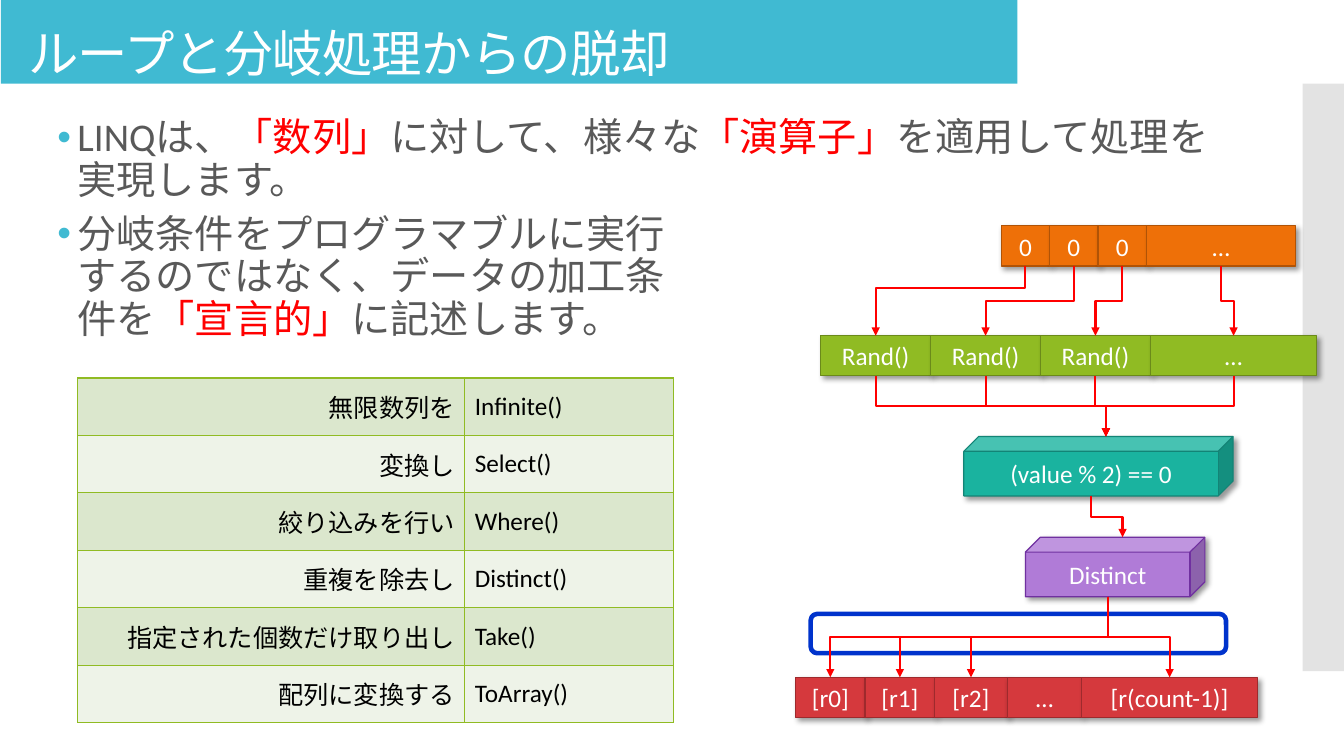
"""Build a slide on replacing loops and branches with LINQ operators."""
from lxml.etree import SubElement
from pptx import Presentation
from pptx.dml.color import RGBColor
from pptx.enum.shapes import MSO_CONNECTOR as CONN, MSO_SHAPE as SHAPE
from pptx.enum.text import MSO_ANCHOR as ANCHOR, MSO_AUTO_SIZE as AUTO, PP_ALIGN as ALIGN
from pptx.oxml import parse_xml
from pptx.oxml.ns import nsdecls, qn
from pptx.util import Emu, Pt

SCALE = 9144
FONT = "Calibri"
WHITE = RGBColor(0xFF, 0xFF, 0xFF)
BLACK = RGBColor(0x00, 0x00, 0x00)
GRAY = RGBColor(0x59, 0x59, 0x59)
SIDE_GRAY = RGBColor(0xC8, 0xC8, 0xC8)
RED = RGBColor(0xFF, 0x00, 0x00)
BLUE = RGBColor(0x00, 0x33, 0xCC)
CYAN = RGBColor(0x40, 0xBA, 0xD2)
ORANGE = RGBColor(0xEE, 0x70, 0x08)
ORANGE_EDGE = RGBColor(0xB0, 0x53, 0x06)
GREEN = RGBColor(0x90, 0xBB, 0x23)
GREEN_EDGE = RGBColor(0x6B, 0x8A, 0x1A)
CRIMSON = RGBColor(0xD5, 0x39, 0x3D)
CRIMSON_EDGE = RGBColor(0x9E, 0x2A, 0x2D)
TEAL = RGBColor(0x1A, 0xB3, 0x9F)
TEAL_EDGE = RGBColor(0x13, 0x84, 0x76)
PURPLE = RGBColor(0xB0, 0x7B, 0xD7)
PURPLE_EDGE = RGBColor(0x70, 0x30, 0xA0)
BANDS = (RGBColor(0xDB, 0xE7, 0xCD), RGBColor(0xEE, 0xF3, 0xE8))

STEPS = [
    ("無限数列を", "Infinite()"),
    ("変換し", "Select()"),
    ("絞り込みを行い", "Where()"),
    ("重複を除去し", "Distinct()"),
    ("指定された個数だけ取り出し", "Take()"),
    ("配列に変換する", "ToArray()"),
]


def px(*lengths):
    """Turn px lengths into EMU."""
    return [Emu(round(n * SCALE)) for n in lengths]


def style_run(r, size, color):
    """Set the font, size and colour of a run."""
    r.font.name = FONT
    r.font.size = Pt(size)
    r.font.color.rgb = color


def add_panel(s, kind, box, fill=None, edge=None, edge_width=0.85):
    """Add a flat preset shape."""
    sp = s.shapes.add_shape(kind, *px(*box))
    sp.shadow.inherit = False
    if fill is None:
        sp.fill.background()
    else:
        sp.fill.solid()
        sp.fill.fore_color.rgb = fill
    if edge is None:
        sp.line.fill.background()
    else:
        sp.line.color.rgb = edge
        sp.line.width = Pt(edge_width)
    return sp


def add_block(s, kind, box, label, fill, edge):
    """Add a labelled shape with a soft shadow."""
    sp = add_panel(s, kind, box, fill, edge)
    effects = sp._element.spPr.find(qn("a:effectLst"))
    effects.append(parse_xml(
        f'<a:outerShdw {nsdecls("a")} blurRad="50800" dist="38100" dir="2700000" '
        'algn="tl" rotWithShape="0"><a:srgbClr val="000000">'
        '<a:alpha val="40000"/></a:srgbClr></a:outerShdw>'))
    tf = sp.text_frame
    tf.word_wrap = True
    if kind == SHAPE.RECTANGLE:
        tf.auto_size = AUTO.SHAPE_TO_FIT_TEXT
    tf.vertical_anchor = ANCHOR.MIDDLE
    p = tf.paragraphs[0]
    p.text = label
    p.alignment = ALIGN.CENTER
    style_run(p.runs[0], 18, WHITE)
    return sp


def add_sequence(s, left, top, cells, fill, edge):
    """Add a row of adjoining cells given as label and width."""
    blocks = []
    for label, width in cells:
        box = (left, top, width, 40)
        blocks.append(add_block(s, SHAPE.RECTANGLE, box, label, fill, edge))
        left += width
    return blocks


def cube_depth(sp):
    """Return the depth of a cube, or zero for a flat shape."""
    return sp.height // 4 if sp.auto_shape_type == SHAPE.CUBE else 0


def add_arrow(s, source, target, bend=0.5):
    """Add an elbow arrow from the bottom of one shape to the top of another."""
    x1 = source.left + (source.width - cube_depth(source)) // 2
    x2 = target.left + (target.width + cube_depth(target)) // 2
    y1, y2 = source.top + source.height, target.top
    cx, cy = (x1 + x2) // 2, (y1 + y2) // 2
    half_run, half_drop = abs(x2 - x1) // 2, (y2 - y1) // 2
    side = 1 if x2 < x1 else -1
    line = s.shapes.add_connector(
        CONN.ELBOW, Emu(cx - side * half_drop), Emu(cy - half_run),
        Emu(cx + side * half_drop), Emu(cy + half_run))
    line.line.color.rgb = RED
    line.line.width = Pt(1.5)
    spPr = line._element.spPr
    spPr.find(qn("a:xfrm")).set("rot", "5400000" if side == 1 else "16200000")
    guides = spPr.find(qn("a:prstGeom")).find(qn("a:avLst"))
    SubElement(guides, qn("a:gd"), name="adj1", fmla=f"val {round(bend * 100000)}")
    SubElement(spPr.find(qn("a:ln")), qn("a:tailEnd"), type="triangle")
    SubElement(spPr, qn("a:effectLst"))


def add_text(s, box, parts, size):
    """Add a wrapped paragraph made of text and colour pairs."""
    tf = s.shapes.add_textbox(*px(*box)).text_frame
    tf.word_wrap = True
    p = tf.paragraphs[0]
    p.line_spacing = 0.9
    for text, color in parts:
        r = p.add_run()
        r.text = text
        style_run(r, size, color)
    return tf


def add_bullet(s, box, parts):
    """Add a bulleted paragraph with a hanging indent."""
    p = add_text(s, box, parts, 28).paragraphs[0]
    p.space_before = Pt(12)
    pPr = p._p.get_or_add_pPr()
    pPr.set("marL", "182880")
    pPr.set("indent", "-182880")
    color = SubElement(pPr, qn("a:buClr"))
    SubElement(color, qn("a:srgbClr"), val=str(CYAN))
    SubElement(pPr, qn("a:buFont"), typeface="Arial")
    SubElement(pPr, qn("a:buChar"), char="•")


def fill_cell(cell, text, align, fill):
    """Write one table cell with its borders and fill."""
    tcPr = cell._tc.get_or_add_tcPr()
    for edge in ("lnL", "lnR", "lnT", "lnB"):
        ln = SubElement(tcPr, qn(f"a:{edge}"), w="12700")
        SubElement(SubElement(ln, qn("a:solidFill")), qn("a:srgbClr"), val=str(GREEN))
    cell.fill.solid()
    cell.fill.fore_color.rgb = fill
    cell.vertical_anchor = ANCHOR.MIDDLE
    p = cell.text_frame.paragraphs[0]
    p.text = text
    p.alignment = align
    style_run(p.runs[0], 18, BLACK)


def add_steps_table(s):
    """Add the table pairing each step with its operator."""
    table = s.shapes.add_table(len(STEPS), 2, *px(77, 375, 591, 342)).table
    table.first_row = table.horz_banding = False
    for column, width in zip(table.columns, px(384, 207)):
        column.width = width
    for i, step in enumerate(STEPS):
        for j, align in enumerate((ALIGN.RIGHT, ALIGN.LEFT)):
            fill_cell(table.cell(i, j), step[j], align, BANDS[i % 2])


def add_flow(s):
    """Add the data flow from the infinite sequence to the result array."""
    zeros = add_sequence(s, 993, 224, [("0", 48)] * 3 + [("…", 148)],
                         ORANGE, ORANGE_EDGE)
    rands = add_sequence(s, 814, 333, [("Rand()", 109)] * 3 + [("…", 165)],
                         GREEN, GREEN_EDGE)
    results = add_sequence(
        s, 789, 672,
        [("[r0]", 69), ("[r1]", 69), ("[r2]", 72), ("…", 74), ("[r(count-1)]", 174)],
        CRIMSON, CRIMSON_EDGE)
    where = add_block(s, SHAPE.CUBE, (956, 433, 267, 59), "(value % 2) == 0",
                      TEAL, TEAL_EDGE)
    distinct = add_block(s, SHAPE.CUBE, (1017, 533, 178, 59), "Distinct",
                         PURPLE, PURPLE_EDGE)
    add_panel(s, SHAPE.ROUNDED_RECTANGLE, (804, 609, 412, 39), edge=BLUE, edge_width=3.25)
    for zero, rand, bend in zip(zeros, rands, (0.31, 0.5, 0.5, 0.5)):
        add_arrow(s, zero, rand, bend)
        add_arrow(s, rand, where)
    add_arrow(s, where, distinct)
    for result in results[:3] + results[4:]:
        add_arrow(s, distinct, result)


def main():
    """Build and save the slide."""
    prs = Presentation()
    prs.slide_width, prs.slide_height = px(1333, 750)
    s = prs.slides.add_slide(prs.slide_layouts[6])
    add_panel(s, SHAPE.RECTANGLE, (1, 0, 1008, 83), CYAN)
    side = add_panel(s, SHAPE.RECTANGLE, (1292, 83, 41, 583), SIDE_GRAY)
    SubElement(side._element.spPr.find(".//" + qn("a:srgbClr")), qn("a:alpha"), val="50000")
    title = add_text(s, (18, 14, 1248, 83), [("ループと分岐処理からの脱却", WHITE)], 36)
    title.vertical_anchor = ANCHOR.MIDDLE
    title.paragraphs[0].runs[0].font._element.set("spc", "-60")
    add_bullet(s, (47, 112, 1189, 96), [
        ("LINQは、", GRAY), ("「数列」", RED), ("に対して、様々な", GRAY),
        ("「演算子」", RED), ("を適用して処理を実現します。", GRAY)])
    add_bullet(s, (47, 208, 641, 165), [
        ("分岐条件をプログラマブルに実行するのではなく、データの加工条件を", GRAY),
        ("「宣言的」", RED), ("に記述します。", GRAY)])
    add_steps_table(s)
    add_flow(s)
    prs.save("out.pptx")


if __name__ == "__main__":
    main()
